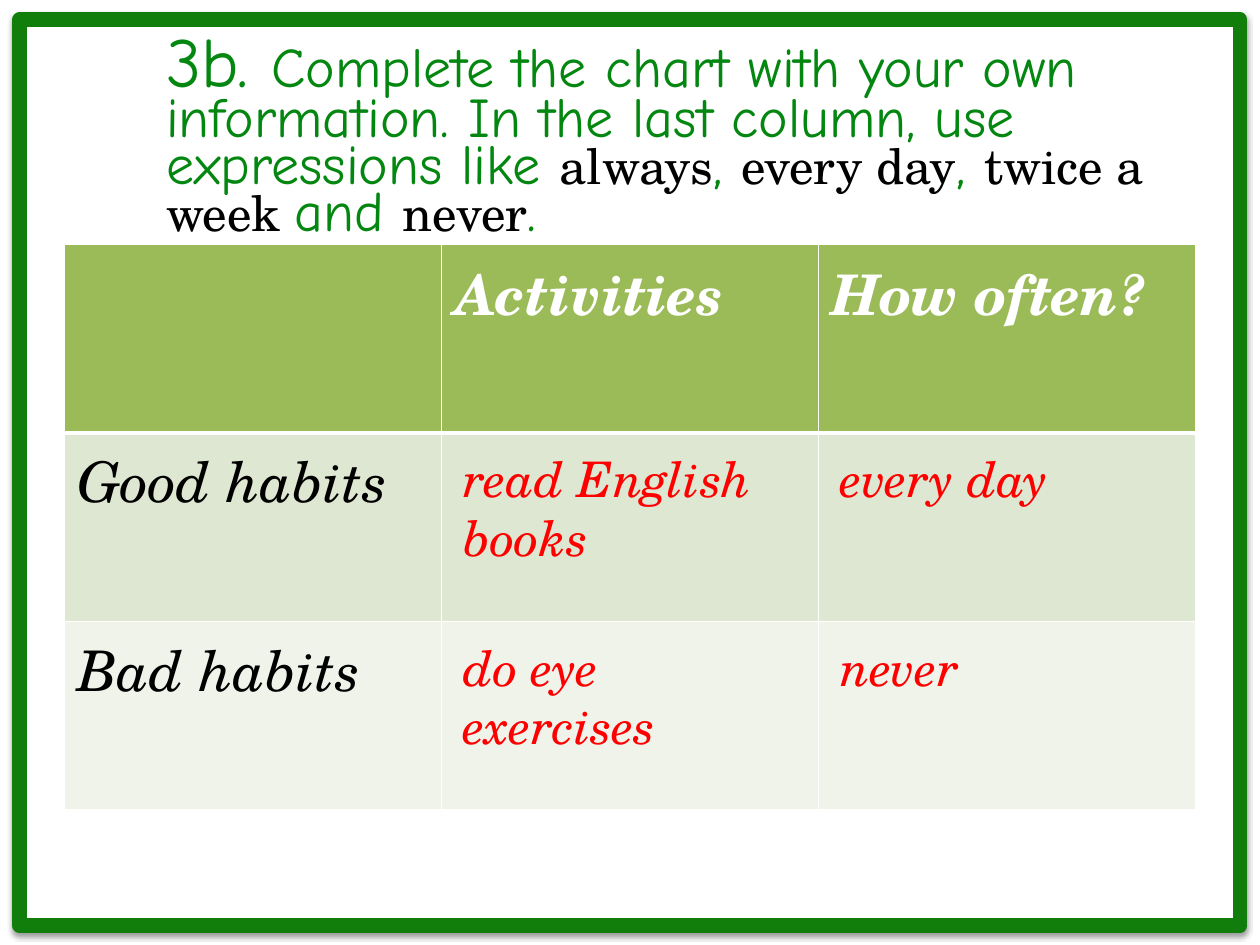
from lxml import etree
from pptx import Presentation
from pptx.dml.color import RGBColor
from pptx.enum.shapes import MSO_SHAPE
from pptx.enum.text import MSO_ANCHOR, MSO_AUTO_SIZE
from pptx.oxml import parse_xml
from pptx.oxml.ns import nsdecls, qn
from pptx.util import Cm, Pt

RECTANGLE = MSO_SHAPE.RECTANGLE
TOP = MSO_ANCHOR.TOP
FIT_SHAPE = MSO_AUTO_SIZE.SHAPE_TO_FIT_TEXT

COLORS = {
    "white": "FFFFFF", "black": "000000", "frame": "117E0C", "title": "038710",
    "header": "9BBB59", "band1": "DEE7D1", "band2": "EFF3EA", "answer": "FF0000",
}
COMIC, SCHOLA = "Comic Neue", "TeX Gyre Schola"

TITLE = [
    ("3b. ", COMIC, 40, "title"),
    ("Complete the chart with your own information. In the last column, "
     "use expressions like ", COMIC, 32, "title"),
    ("always", SCHOLA, 28, "black"), (", ", COMIC, 32, "title"),
    ("every day", SCHOLA, 28, "black"), (", ", COMIC, 32, "title"),
    ("twice a week ", SCHOLA, 28, "black"), ("and ", COMIC, 32, "title"),
    ("never", SCHOLA, 28, "black"), (".", COMIC, 32, "title"),
]
HEADINGS = [
    ["", "Activities", "How often?"],
    ["Good habits", "", ""],
    ["Bad habits", "", ""],
]
ANSWERS = [["read English books", "every day"], ["do eye exercises", "never"]]
ROW_FILLS = ["header", "band1", "band2"]


def rgb(name):
    return RGBColor.from_string(COLORS[name])


def style(r, font, size, color, bold=False, italic=False):
    r.font.name, r.font.size = font, Pt(size)
    r.font.color.rgb = rgb(color)
    r.font.bold, r.font.italic = bold, italic


def add_frame(s, x, y, w, h):
    sp = s.shapes.add_shape(RECTANGLE, Cm(x), Cm(y), Cm(w), Cm(h))
    sp.fill.solid()
    sp.fill.fore_color.rgb = rgb("white")
    sp.line.color.rgb = rgb("frame")
    sp.line.width = Pt(8.5)
    etree.SubElement(sp.line._get_or_add_ln(), qn("a:round"))
    sp.shadow.inherit = False
    effects = sp._element.spPr.find(qn("a:effectLst"))
    effects.append(parse_xml(
        f'<a:outerShdw {nsdecls("a")} blurRad="{Pt(3.1)}" dist="{Pt(1.6)}" '
        f'dir="5400000" rotWithShape="0"><a:srgbClr val="{COLORS["black"]}">'
        '<a:alpha val="38000"/></a:srgbClr></a:outerShdw>'))


def add_text_box(s, x, y, w, h):
    tb = s.shapes.add_textbox(Cm(x), Cm(y), Cm(w), Cm(h))
    tf = tb.text_frame
    tf.word_wrap = True
    tf.vertical_anchor = TOP
    return tf


def add_title(s, x, y, w, h):
    p = add_text_box(s, x, y, w, h).paragraphs[0]
    p.line_spacing = 0.7
    for text, font, size, color in TITLE:
        r = p.add_run()
        r.text = text
        style(r, font, size, color)


def set_borders(cell, top, bottom):
    """Draw white cell borders; top and bottom widths are in points."""
    tcPr = cell._tc.get_or_add_tcPr()
    widths = {"lnL": 1, "lnR": 1, "lnT": top, "lnB": bottom}
    for i, (tag, width) in enumerate(widths.items()):
        tcPr.insert(i, parse_xml(
            f'<a:{tag} {nsdecls("a")} w="{Pt(width)}"><a:solidFill>'
            f'<a:srgbClr val="{COLORS["white"]}"/></a:solidFill></a:{tag}>'))


def add_habits_table(s, x, y, w, h):
    n_rows, n_cols = len(HEADINGS), len(HEADINGS[0])
    table = s.shapes.add_table(n_rows, n_cols, Cm(x), Cm(y), Cm(w), Cm(h)).table
    for i, row in enumerate(HEADINGS):
        for j, text in enumerate(row):
            cell = table.cell(i, j)
            cell.fill.solid()
            cell.fill.fore_color.rgb = rgb(ROW_FILLS[i])
            set_borders(cell, 3 if i == 1 else 1, 3 if i == 0 else 1)
            if text:
                cell.text_frame.text = text
                style(cell.text_frame.paragraphs[0].runs[0], SCHOLA, 32,
                      "white" if i == 0 else "black", bold=i == 0, italic=True)

    col_w, row_h, inset = w / n_cols, h / n_rows, 0.19
    for i, row in enumerate(ANSWERS, 1):
        for j, text in enumerate(row, 1):
            tf = add_text_box(s, x + j * col_w + inset, y + i * row_h + inset,
                              7.2, 2.64 if j == 1 else 1.45)
            tf.auto_size = FIT_SHAPE
            tf.text = text
            style(tf.paragraphs[0].runs[0], SCHOLA, 28, "answer", italic=True)


def main():
    prs = Presentation()
    prs.slide_width, prs.slide_height = Cm(25.4), Cm(19.05)
    s = prs.slides.add_slide(prs.slide_layouts[6])
    add_frame(s, 0.4, 0.4, 24.6, 18.26)
    add_title(s, 3.1, 0.7, 22.3, 2)
    add_habits_table(s, 1.3, 4.93, 22.8, 11.4)
    prs.save("out.pptx")


if __name__ == "__main__":
    main()
